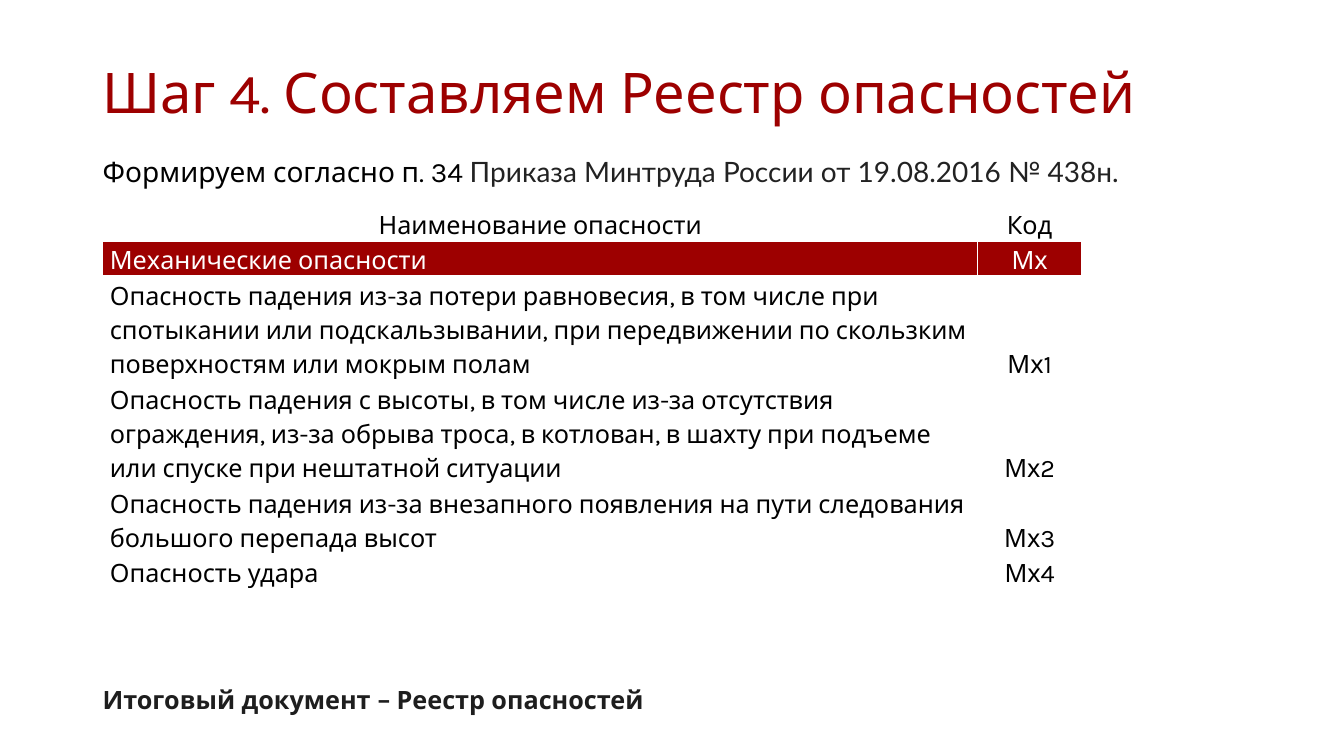
import pptx
import pptx.dml.color
import pptx.enum.text
import pptx.oxml
import pptx.oxml.ns
import pptx.util

Pt = pptx.util.Pt
RGBColor = pptx.dml.color.RGBColor
Align = pptx.enum.text.PP_ALIGN
Anchor = pptx.enum.text.MSO_ANCHOR

DARK_RED = RGBColor(0x9D, 0x00, 0x00)
BLACK = RGBColor(0x00, 0x00, 0x00)
WHITE = RGBColor(0xFF, 0xFF, 0xFF)
CHARCOAL = RGBColor(0x22, 0x22, 0x22)
NEAR_BLACK = RGBColor(0x1E, 0x1E, 0x1E)

MAIN_FONT = "Karla"
ORDER_FONT = "Lato"
TEXT_LEFT = 66.24
TEXT_WIDTH = 828
TABLE_LINE = 24.3

# Hazard name, code, number of text lines in the row
HAZARDS = [
    ("Наименование опасности", "Код", 1),
    ("Механические опасности", "Мх", 1),
    ("Опасность падения из-за потери равновесия, в том числе при спотыкании "
     "или подскальзывании, при передвижении по скользким поверхностям "
     "или мокрым полам", "Мх1", 3),
    ("Опасность падения с высоты, в том числе из-за отсутствия ограждения, "
     "из-за обрыва троса, в котлован, в шахту при подъеме или спуске "
     "при нештатной ситуации", "Мх2", 3),
    ("Опасность падения из-за внезапного появления на пути следования "
     "большого перепада высот", "Мх3", 2),
    ("Опасность удара", "Мх4", 1),
]


def add_span(para, text, size, color, font=MAIN_FONT, bold=False):
    span = para.add_run()
    span.text = text
    span.font.name = font
    span.font.size = Pt(size)
    span.font.bold = bold
    span.font.color.rgb = color


def add_text_line(slide, top, height, anchor=Anchor.TOP):
    """Add a text box across the slide and return its empty paragraph."""
    box = slide.shapes.add_textbox(
        Pt(TEXT_LEFT), Pt(top), Pt(TEXT_WIDTH), Pt(height))
    frame = box.text_frame
    frame.word_wrap = True
    frame.vertical_anchor = anchor
    para = frame.paragraphs[0]
    para.line_spacing = 0.9
    return para


def add_borders(cell, bottom_width):
    """Draw white cell borders; call before the fill to keep the XML order."""
    properties = cell._tc.get_or_add_tcPr()
    for side, width in (("L", 1), ("R", 1), ("T", 1), ("B", bottom_width)):
        properties.append(pptx.oxml.parse_xml(
            f'<a:ln{side} {pptx.oxml.ns.nsdecls("a")} w="{Pt(width)}">'
            f'<a:solidFill><a:srgbClr val="{WHITE}"/></a:solidFill>'
            f'</a:ln{side}>'))


def fill_cell(cell, text, align, color, fill, bottom_width):
    add_borders(cell, bottom_width)
    if fill is None:
        cell.fill.background()
    else:
        cell.fill.solid()
        cell.fill.fore_color.rgb = fill
    cell.vertical_anchor = Anchor.BOTTOM
    cell.margin_left = cell.margin_right = Pt(5)
    cell.margin_top = cell.margin_bottom = 0
    para = cell.text_frame.paragraphs[0]
    para.alignment = align
    para.line_spacing = 1.15
    add_span(para, text, 18, color)


def add_hazard_table(slide):
    total_lines = sum(lines for _, _, lines in HAZARDS)
    table = slide.shapes.add_table(
        len(HAZARDS), 2, Pt(73.5), Pt(147), Pt(699),
        Pt(total_lines * TABLE_LINE)).table
    table.first_row = False
    table.horz_banding = False
    table.columns[0].width = Pt(625)
    table.columns[1].width = Pt(74)
    for index, (name, code, lines) in enumerate(HAZARDS):
        table.rows[index].height = Pt(lines * TABLE_LINE)
        is_header, is_group = index == 0, index == 1
        color = WHITE if is_group else BLACK
        fill = None if is_header else DARK_RED if is_group else WHITE
        bottom_width = 3 if is_header else 1
        name_align = Align.CENTER if is_header else Align.LEFT
        for column, (text, align) in enumerate(
                ((name, name_align), (code, Align.CENTER))):
            fill_cell(table.cell(index, column), text, align, color, fill,
                      bottom_width)


def main():
    deck = pptx.Presentation()
    deck.slide_width = Pt(960)
    deck.slide_height = Pt(540)
    slide = deck.slides.add_slide(deck.slide_layouts[6])

    title = add_text_line(slide, 24.5, 69, Anchor.BOTTOM)
    add_span(title, "Шаг 4. Составляем Реестр опасностей", 40, DARK_RED)

    basis = add_text_line(slide, 109.5, 32)
    add_span(basis, "Формируем согласно п. 34 ", 20, BLACK)
    add_span(basis, "Приказа Минтруда России от 19.08.2016 № 438н.", 20,
             CHARCOAL, font=ORDER_FONT)

    add_hazard_table(slide)

    result = add_text_line(slide, 488, 30)
    add_span(result, "Итоговый документ – Реестр опасностей", 18, NEAR_BLACK,
             bold=True)

    deck.save("out.pptx")


if __name__ == "__main__":
    main()
